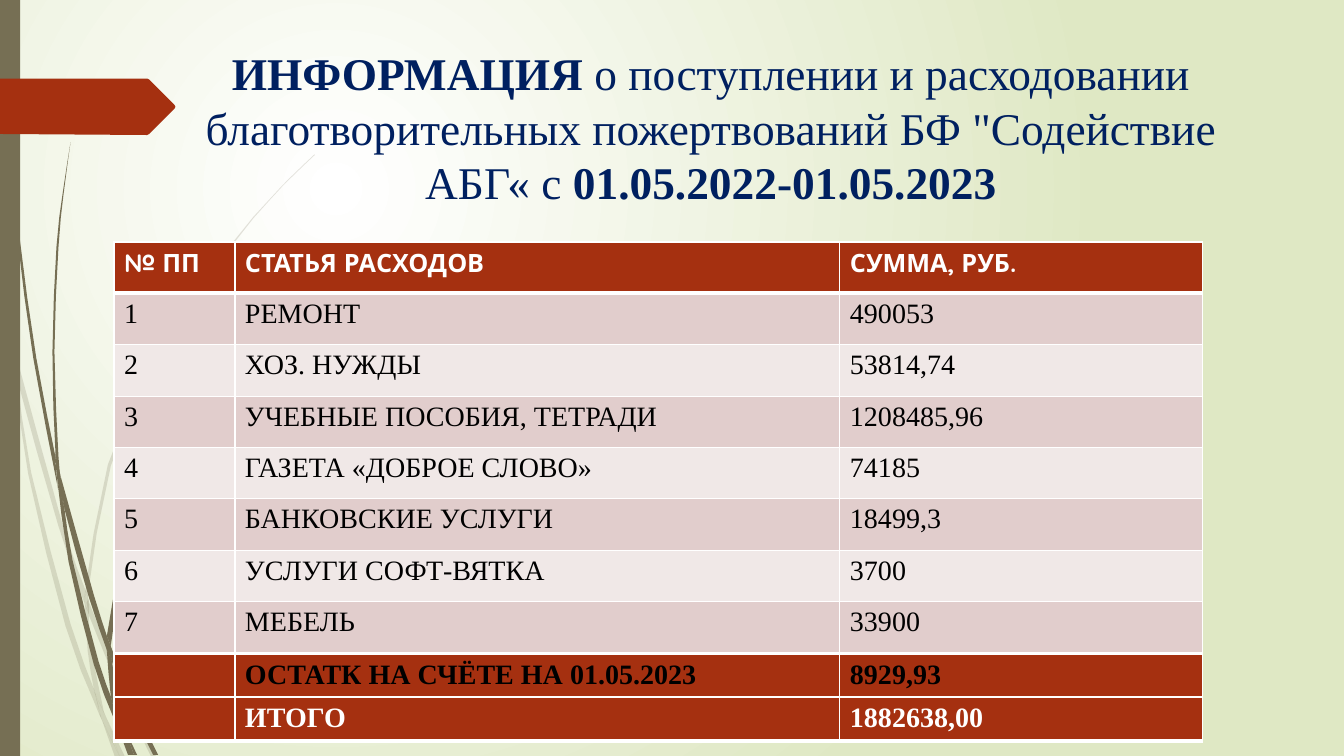
from dataclasses import dataclass

import pptx
import pptx.dml.color
import pptx.enum.shapes
import pptx.enum.text
import pptx.oxml
import pptx.oxml.ns
import pptx.util
from pptx.util import Inches

Point = tuple[float, float]


@dataclass(frozen=True)
class Theme:
    olive: str = "766F54"
    rust: str = "A53010"
    navy: str = "002060"
    white: str = "FFFFFF"
    black: str = "000000"
    pale_green: str = "DFE8C4"
    bands: tuple[str, str] = ("E1CDCC", "F0E8E7")
    serif: str = "Times New Roman"
    sans: str = "Quicksand"
    title_size: float = 32.4
    header_size: float = 18
    body_size: float = 20


@dataclass(frozen=True)
class Strand:
    """A blade of grass between two smooth edges, the second running back."""
    edge: list[Point]
    back: list[Point]


@dataclass(frozen=True)
class Row:
    values: tuple[str, str, str]
    fill: str
    color: str
    font: str
    size: float
    bold: bool = False
    bottom_border: float = 1


THEME = Theme()
COLUMN_WIDTHS = (1.2, 6, 3.6)
TABLE_LEFT = 1.13

FAINT_STRANDS = [
    Strand([(.11, 3.5), (.09, 3.22), (0, 2.82)], [(0, 2.99), (.1, 3.44), (.11, 3.5)]),
    Strand([(.14, 3.45), (.17, 3.76), (.58, 5.22), (.84, 5.99)], [(.85, 5.86), (.62, 5.2), (.14, 3.45)]),
    Strand([(.88, 5.96), (.88, 6.1), (1.23, 6.94), (1.5, 7.51)], [(1.55, 7.51), (1.27, 6.92), (.92, 6.07), (.88, 5.96)]),
    Strand([(1.05, 7.11), (1.19, 7.51)], [(1.24, 7.51), (1.05, 7.11)]),
    Strand([(.11, 3.5), (.28, 4.7), (.65, 6.21), (.92, 6.93), (1.01, 7.14)],
           [(.99, 7.07), (.93, 6.83), (.7, 6.19), (.31, 4.69), (.17, 3.76), (.11, 3.5)]),
    Strand([(.84, 5.99), (.87, 6.46), (.93, 6.83), (.96, 6.92), (1.05, 7.11)],
           [(1.03, 7.06), (.91, 6.46), (.88, 6.1), (.88, 6.08), (.84, 5.99)]),
    Strand([(.88, 5.96), (.88, 5.84), (1.1, 4.62), (1.6, 3.49), (2.29, 2.45), (2.68, 1.98), (2.9, 1.75), (3.12, 1.54)],
           [(3.12, 1.53), (2.89, 1.75), (2.68, 1.97), (2.28, 2.44), (1.58, 3.48), (1.07, 4.61), (.85, 5.84), (.85, 5.86)]),
    Strand([(1.01, 7.14), (1.14, 7.51)], [(1.19, 7.51), (1.01, 7.14)]),
    Strand([(.85, 5.86), (.84, 5.99), (.88, 6.08)], [(.88, 6.1), (.88, 5.96), (.85, 5.86)]),
    Strand([(.93, 6.83), (.99, 7.07), (1.01, 7.14), (1.19, 7.51)], [(1.19, 7.51), (1.05, 7.11), (.96, 6.92), (.93, 6.83)]),
]
DARK_STRANDS = [
    Strand([(.03, 0), (.04, .48), (.07, 1.1), (.17, 2.33), (.33, 3.55), (.56, 4.77), (.57, 4.81)],
           [(.55, 4.57), (.55, 4.53), (.36, 3.55), (.19, 2.32), (.08, 1.09), (.05, .48), (.04, 0)]),
    Strand([(.6, 4.72), (.64, 5.05), (.88, 5.92), (1.06, 6.45)], [(1.06, 6.33), (1.06, 6.31), (.93, 5.9), (.6, 4.72)]),
    Strand([(1.1, 6.41), (1.11, 6.56), (1.32, 7.08), (1.52, 7.49)], [(1.57, 7.49), (1.36, 7.06), (1.13, 6.49), (1.1, 6.41)]),
    Strand([(.57, 4.77), (.68, 5.57), (.93, 6.59), (1.11, 7.08), (1.17, 7.22)],
           [(1.16, 7.17), (1.1, 6.91), (.98, 6.57), (.72, 5.56), (.64, 5.05), (.57, 4.77)]),
    Strand([(.6, 4.72), (.58, 4.53), (.54, 3.49), (.58, 2.45), (.63, 1.93), (.7, 1.41)],
           [(.7, 1.41), (.62, 1.93), (.56, 2.45), (.52, 3.49), (.55, 4.49), (.6, 4.72)]),
    Strand([(1.22, 7.19), (1.33, 7.49)], [(1.36, 7.49), (1.22, 7.19)]),
    Strand([(.55, 4.49), (.55, 4.53), (.57, 4.77), (.64, 5.05)], [(.6, 4.72), (.55, 4.49)]),
    Strand([(1.1, 6.41), (1.11, 6.33), (1.25, 5.52), (1.58, 4.76), (2.05, 4.06), (2.31, 3.74), (2.45, 3.59), (2.61, 3.44)],
           [(2.6, 3.44), (2.45, 3.58), (2.31, 3.73), (2.04, 4.05), (1.56, 4.74), (1.22, 5.51), (1.06, 6.31)]),
    Strand([(1.17, 7.22), (1.27, 7.49)], [(1.31, 7.49), (1.17, 7.22)]),
    Strand([(1.06, 6.45), (1.1, 6.91), (1.16, 7.06), (1.22, 7.19)], [(1.21, 7.16), (1.11, 6.56), (1.09, 6.51), (1.06, 6.45)]),
    Strand([(1.06, 6.31), (1.06, 6.45), (1.09, 6.51), (1.11, 6.56)], [(1.1, 6.41), (1.06, 6.31)]),
    Strand([(1.1, 6.91), (1.16, 7.17), (1.17, 7.22), (1.3, 7.49)], [(1.33, 7.49), (1.22, 7.19), (1.16, 7.06), (1.1, 6.91)]),
]
TAG_OUTLINE = [(0, .78), (1.46, .78), (1.48, .79), (1.73, 1.04), (1.74, 1.06),
               (1.73, 1.08), (1.48, 1.33), (1.46, 1.34), (0, 1.33)]

EXPENSES = [
    ("1", "РЕМОНТ", "490053"),
    ("2", "ХОЗ. НУЖДЫ", "53814,74"),
    ("3", "УЧЕБНЫЕ ПОСОБИЯ, ТЕТРАДИ", "1208485,96"),
    ("4", "ГАЗЕТА «ДОБРОЕ СЛОВО»", "74185"),
    ("5", "БАНКОВСКИЕ УСЛУГИ", "18499,3"),
    ("6", "УСЛУГИ СОФТ-ВЯТКА", "3700"),
    ("7", "МЕБЕЛЬ", "33900"),
]
HEADER = Row(("№ ПП", "СТАТЬЯ РАСХОДОВ", "СУММА, РУБ."), THEME.rust, THEME.white,
             THEME.sans, THEME.header_size, True, 3)
BODY = [Row(values, THEME.bands[index % 2], THEME.black, THEME.serif, THEME.body_size)
        for index, values in enumerate(EXPENSES)]
BALANCE, TOTAL = (
    Row(values, THEME.rust, color, THEME.serif, THEME.body_size, True, 3)
    for values, color in ((("", "ОСТАТК НА СЧЁТЕ НА 01.05.2023", "8929,93"), THEME.black),
                          (("", "ИТОГО", "1882638,00"), THEME.white)))


def rgb(color: str) -> pptx.dml.color.RGBColor:
    return pptx.dml.color.RGBColor.from_string(color)


def add_text(paragraph, text: str, *, font: str, size: float, color: str, bold: bool = False) -> None:
    run = paragraph.add_run()
    run.text = text
    run.font.name, run.font.size, run.font.bold = font, pptx.util.Pt(size), bold
    run.font.color.rgb = rgb(color)


def paint(shape, color: str, opacity: int = 100) -> None:
    shape.shadow.inherit = False
    shape.fill.solid()
    shape.fill.fore_color.rgb = rgb(color)
    shape.line.fill.background()
    if opacity < 100:
        color_element = shape.element.spPr.find(".//" + pptx.oxml.ns.qn("a:srgbClr"))
        alpha = color_element.makeelement(pptx.oxml.ns.qn("a:alpha"), {"val": str(opacity * 1000)})
        color_element.append(alpha)


def smooth(points: list[Point]) -> list[Point]:
    """Add the Catmull-Rom midpoint between each two points."""
    padded = [points[0], *points, points[-1]]
    curve = [points[0]]
    for a, b, c, d in zip(padded, padded[1:], padded[2:], padded[3:]):
        if len(points) > 2:
            curve.append(tuple((9 * (b[i] + c[i]) - a[i] - d[i]) / 16 for i in (0, 1)))
        curve.append(c)
    return curve


def add_outline(shapes, points: list[Point], color: str, opacity: int = 100) -> None:
    start, *rest = [(Inches(x), Inches(y)) for x, y in points]
    builder = shapes.build_freeform(*start)
    builder.add_line_segments(rest, close=True)
    paint(builder.convert_to_shape(), color, opacity)


def add_grass(slide, strands: list[Strand], opacity: int) -> None:
    group = slide.shapes.add_group_shape()
    for strand in strands:
        add_outline(group.shapes, smooth(strand.edge) + smooth(strand.back), THEME.olive, opacity)


def set_background(slide) -> None:
    """Radial gradient centred in the upper left quarter."""
    fill = slide.background.fill
    fill.gradient()
    for stop, color in zip(fill.gradient_stops, (THEME.white, THEME.pale_green)):
        stop.color.rgb = rgb(color)
    gradient = slide.element.find(".//" + pptx.oxml.ns.qn("a:gradFill"))
    linear = gradient.find(pptx.oxml.ns.qn("a:lin"))
    gradient.replace(linear, pptx.oxml.parse_xml(
        f'<a:path {pptx.oxml.ns.nsdecls("a")} path="circle">'
        '<a:fillToRect l="50000" t="50000" r="100000" b="100000"/></a:path>'))


def add_borders(cell, bottom: float) -> None:
    properties = cell._tc.get_or_add_tcPr()
    for side, width in (("L", 1), ("R", 1), ("T", 1), ("B", bottom)):
        properties.append(pptx.oxml.parse_xml(
            f'<a:ln{side} {pptx.oxml.ns.nsdecls("a")} w="{pptx.util.Pt(width)}"><a:solidFill>'
            f'<a:srgbClr val="{THEME.white}"/></a:solidFill></a:ln{side}>'))


def add_table(slide, rows: list[Row], top: float, row_height: float) -> None:
    table = slide.shapes.add_table(
        len(rows), len(COLUMN_WIDTHS), Inches(TABLE_LEFT), Inches(top),
        Inches(sum(COLUMN_WIDTHS)), Inches(row_height * len(rows))).table
    table.first_row = table.horz_banding = False
    for column, width in zip(table.columns, COLUMN_WIDTHS):
        column.width = Inches(width)
    for row, cells in zip(rows, table.rows):
        for value, cell in zip(row.values, cells.cells):
            add_borders(cell, row.bottom_border)
            cell.fill.solid()
            cell.fill.fore_color.rgb = rgb(row.fill)
            if value:
                add_text(cell.text_frame.paragraphs[0], value, font=row.font,
                         size=row.size, color=row.color, bold=row.bold)


def format_title(title) -> None:
    title.left, title.top, title.width, title.height = map(Inches, (1.68, .4, 10.74, 2.01))
    title.element.getparent().append(title.element)
    frame = title.text_frame
    frame.word_wrap = True
    frame.auto_size = pptx.enum.text.MSO_AUTO_SIZE.NONE
    frame.vertical_anchor = pptx.enum.text.MSO_ANCHOR.TOP
    paragraph = frame.paragraphs[0]
    paragraph.alignment = pptx.enum.text.PP_ALIGN.CENTER
    paragraph.line_spacing = 1.0
    for text, bold in (("ИНФОРМАЦИЯ ", True),
                       ("о поступлении и расходовании благотворительных пожертвований "
                        "БФ \"Содействие АБГ« с ", False),
                       ("01.05.2022-01.05.2023", True)):
        add_text(paragraph, text, font=THEME.serif, size=THEME.title_size, color=THEME.navy, bold=bold)


def main() -> None:
    presentation = pptx.Presentation()
    presentation.slide_width, presentation.slide_height = Inches(13.33), Inches(7.5)
    slide = presentation.slides.add_slide(presentation.slide_layouts.get_by_name("Title Only"))
    set_background(slide)
    add_grass(slide, FAINT_STRANDS, 20)
    add_grass(slide, DARK_STRANDS, 100)
    bar = slide.shapes.add_shape(pptx.enum.shapes.MSO_SHAPE.RECTANGLE, 0, 0, Inches(.2), Inches(7.5))
    paint(bar, THEME.olive)
    add_outline(slide.shapes, TAG_OUTLINE, THEME.rust)
    format_title(slide.shapes.title)
    add_table(slide, [HEADER, *BODY], 2.4, .51)
    add_table(slide, [BALANCE], 6.49, .43)
    add_table(slide, [TOTAL], 6.92, .43)
    presentation.save("out.pptx")


if __name__ == "__main__":
    main()
